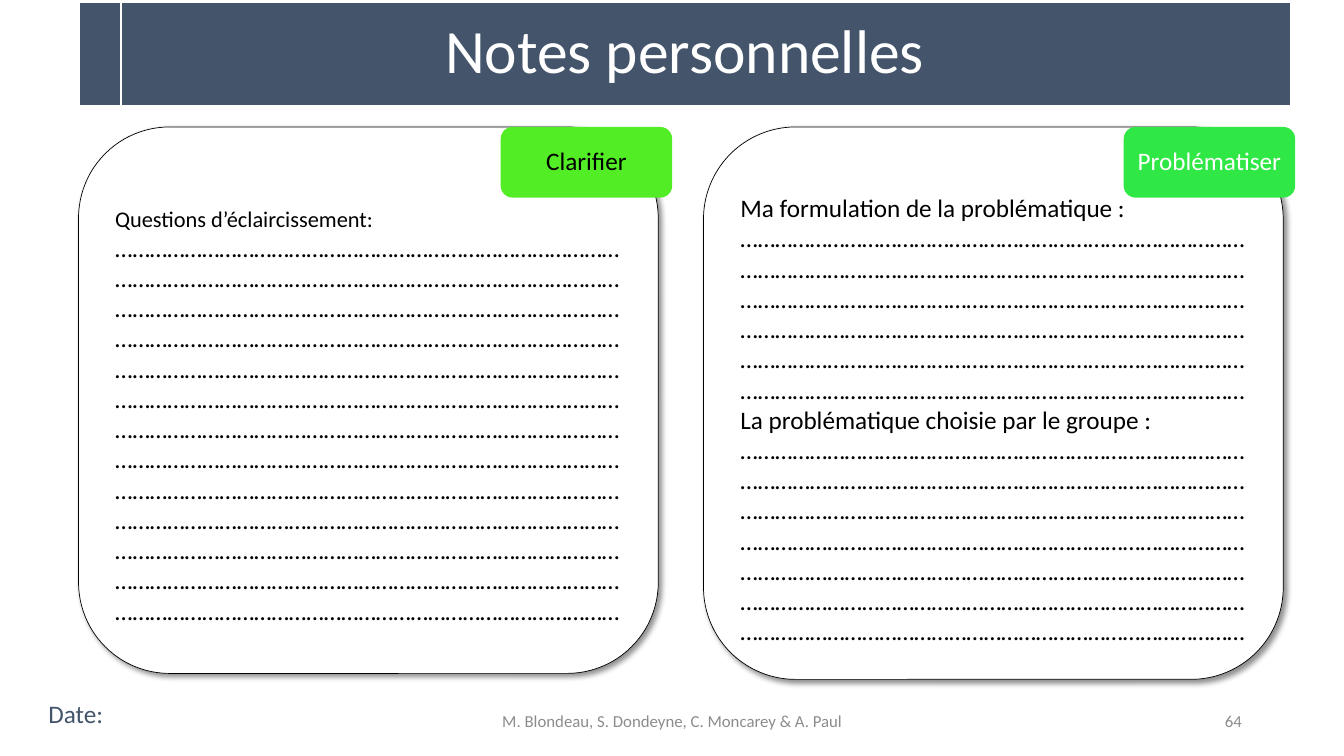
from dataclasses import dataclass

import lxml.etree
import pptx
import pptx.dml.color
import pptx.enum.shapes
import pptx.enum.text
import pptx.oxml
import pptx.oxml.ns
import pptx.util

Cm = pptx.util.Cm
Pt = pptx.util.Pt
Shape = pptx.enum.shapes.MSO_SHAPE
Align = pptx.enum.text.PP_ALIGN
Anchor = pptx.enum.text.MSO_ANCHOR

ELLIPSES_PER_LINE = 29
PANEL_TOP = 3.2


@dataclass(frozen=True)
class Theme:
    font: str = "Calibri"
    slate: str = "44546A"
    white: str = "FFFFFF"
    black: str = "000000"
    grey: str = "8C8C8C"
    lime: str = "52ED24"
    green: str = "30E845"
    title_size: int = 44
    body_size: int = 18
    question_size: int = 16
    footer_size: int = 12


def rgb(value):
    return pptx.dml.color.RGBColor.from_string(value)


def dotted(lines):
    """Return the ellipses that fill the given number of writing lines."""
    return "…" * (ELLIPSES_PER_LINE * lines)


class SlideBuilder:
    def __init__(self, slide, theme):
        self.slide = slide
        self.theme = theme

    def set_text(self, shape, lines, color, align=Align.LEFT, anchor=Anchor.MIDDLE, spacing=None):
        """Fill a shape with (text, size) paragraphs."""
        frame = shape.text_frame
        frame.word_wrap = True
        frame.vertical_anchor = anchor
        for index, (text, size) in enumerate(lines):
            para = frame.paragraphs[0] if index == 0 else frame.add_paragraph()
            para.text = text
            para.alignment = align
            para.line_spacing = spacing
            for span in para.runs:
                span.font.name = self.theme.font
                span.font.size = Pt(size)
                span.font.color.rgb = rgb(color)

    def block(self, kind, left, top, width, height, fill, line=None, line_width=1):
        box = self.slide.shapes.add_shape(kind, Cm(left), Cm(top), Cm(width), Cm(height))
        box.shadow.inherit = False
        box.fill.solid()
        box.fill.fore_color.rgb = rgb(fill)
        if line:
            box.line.color.rgb = rgb(line)
            box.line.width = Pt(line_width)
        else:
            box.line.fill.background()
        return box

    def drop_shadow(self, box):
        effects = box._element.spPr.find(pptx.oxml.ns.qn("a:effectLst"))
        effects.append(pptx.oxml.parse_xml(
            f'<a:outerShdw {pptx.oxml.ns.nsdecls("a")} blurRad="{Pt(4)}" dist="{Pt(3)}" '
            'dir="2700000" algn="tl" rotWithShape="0">'
            f'<a:srgbClr val="{self.theme.black}"><a:alpha val="43000"/></a:srgbClr>'
            '</a:outerShdw>'))

    def panel(self, left, height, text_inset, lines):
        box = self.block(Shape.ROUNDED_RECTANGLE, left, PANEL_TOP, 14.61, height,
                         self.theme.white, self.theme.black, 0.5)
        self.drop_shadow(box)
        self.set_text(box, lines, self.theme.black, anchor=Anchor.TOP)
        frame = box.text_frame
        frame.margin_left = frame.margin_right = Cm(0.25)
        frame.margin_top = Cm(text_inset)
        frame.margin_bottom = 0

    def tag(self, left, text, fill, color):
        box = self.block(Shape.ROUNDED_RECTANGLE, left, PANEL_TOP, 4.32, 1.78, fill)
        self.set_text(box, [(text, self.theme.body_size)], color, Align.CENTER, spacing=0.9)
        box.text_frame.margin_left = box.text_frame.margin_right = Cm(0.18)

    def title(self, text):
        box = self.block(Shape.RECTANGLE, 1.98, 0.05, 30.56, 2.62,
                         self.theme.slate, self.theme.white, 1.5)
        self.set_text(box, [(text, self.theme.title_size)], self.theme.white,
                      Align.CENTER, spacing=0.9)

    def footer(self, left, width, text, align):
        box = self.slide.shapes.add_textbox(Cm(left), Cm(17.65), Cm(width), Cm(1.02))
        self.set_text(box, [(text, self.theme.footer_size)], self.theme.grey, align)

    def date_field(self, text):
        box = self.block(Shape.RECTANGLE, 0.97, 17.48, 6.07, 1.02, self.theme.white)
        self.set_text(box, [(text, self.theme.body_size)], self.theme.slate, anchor=Anchor.TOP)

    def vertical_rule(self, left, bottom):
        rule = self.slide.shapes.add_connector(
            pptx.enum.shapes.MSO_CONNECTOR.STRAIGHT, Cm(left), 0, Cm(left), Cm(bottom))
        rule.line.color.rgb = rgb(self.theme.white)
        rule.line.width = Pt(1)
        lxml.etree.SubElement(rule._element.spPr, pptx.oxml.ns.qn("a:effectLst"))


def main():
    deck = pptx.Presentation()
    deck.slide_width, deck.slide_height = Cm(33.87), Cm(19.05)
    theme = Theme()
    page = SlideBuilder(deck.slides.add_slide(deck.slide_layouts[6]), theme)
    body = theme.body_size

    page.panel(17.73, 13.92, 0.97, [
        ("Ma formulation de la problématique :", body),
        (dotted(6), body),
        ("La problématique choisie par le groupe :", body),
        (dotted(7), body),
    ])
    page.panel(1.98, 13.77, 1.3, [
        ("Questions d’éclaircissement:", theme.question_size),
        (dotted(13), body),
    ])
    page.title("Notes personnelles")
    page.footer(11.23, 11.43, "M. Blondeau, S. Dondeyne, C. Moncarey & A. Paul", Align.CENTER)
    page.footer(23.93, 7.62, "64", Align.RIGHT)
    page.vertical_rule(3.05, 2.69)
    page.date_field("Date:")
    page.tag(12.62, "Clarifier", theme.lime, theme.black)
    page.tag(28.32, "Problématiser", theme.green, theme.white)

    deck.save("out.pptx")


if __name__ == "__main__":
    main()
